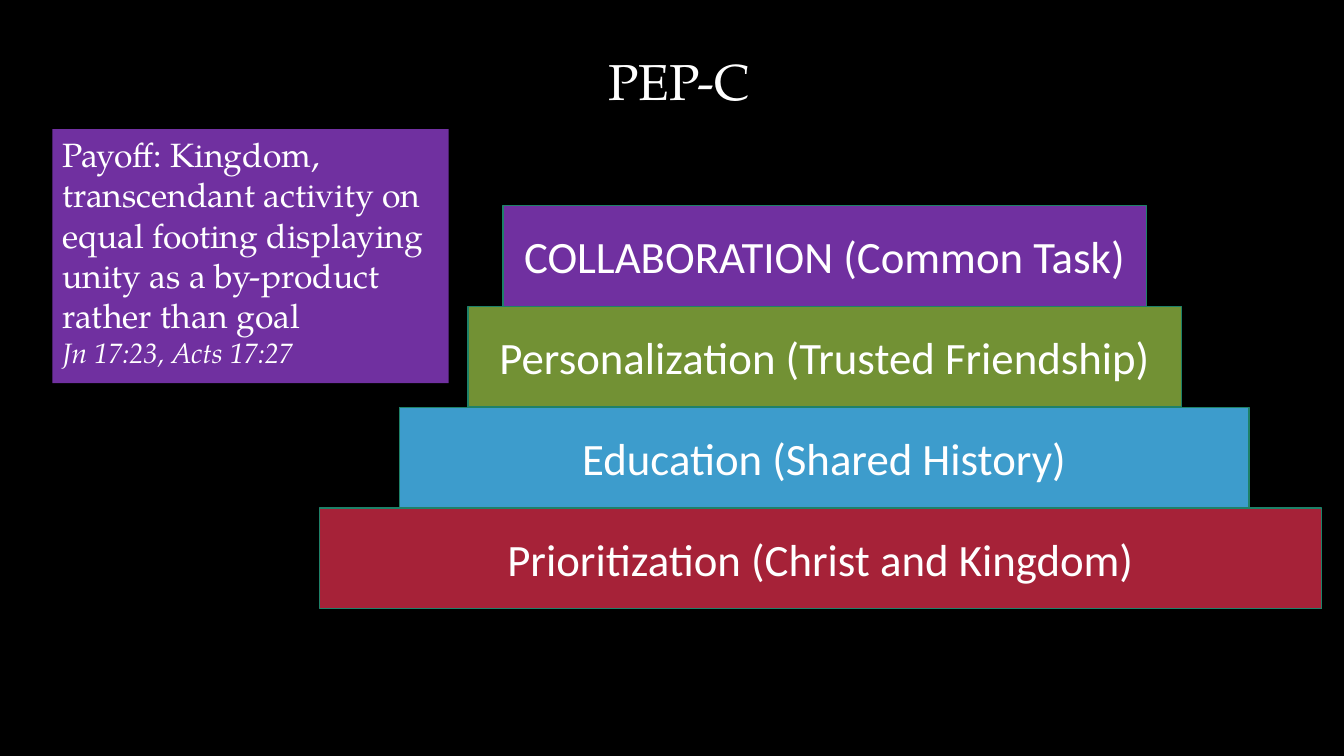
from pptx import Presentation
from pptx.dml.color import RGBColor
from pptx.enum.shapes import MSO_SHAPE as Shape
from pptx.enum.text import MSO_ANCHOR as Anchor, MSO_AUTO_SIZE as AutoSize, PP_ALIGN as Align
from pptx.util import Pt

PX = 9144  # EMU per px, 100 px to the inch
SLIDE_SIZE = (1333, 750)

SERIF, SANS = "TeX Gyre Pagella", "Calibri"
BLACK, WHITE, PURPLE, EDGE = "000000", "FFFFFF", "7030A0", "1E8168"

TITLE = "PEP-C"
TITLE_BOX = (68, 52, 1211, 90)

# Steps from the bottom up: text, fill, left, width
STEPS = [
    ("Prioritization (Christ and Kingdom)", "A62238", 317, 994),
    ("Education (Shared History)", "3D9CCC", 396, 843),
    ("Personalization (Trusted Friendship)", "729134", 464, 708),
    ("COLLABORATION (Common Task)", PURPLE, 499, 638),
]
STEP_HEIGHT, BOTTOM_STEP_TOP = 100, 504

PAYOFF_BOX = (52, 128, 393, 252)
# Text, size, italic
PAYOFF = [
    ("Payoff: Kingdom, transcendant activity on equal footing "
     "displaying unity as a by-product rather than goal", 24, False),
    ("Jn 17:23, Acts 17:27", 20, True),
]


def color(code):
    return RGBColor.from_string(code)


def emu(lengths):
    return [length * PX for length in lengths]


def add_span(para, text, font, size, italic=False):
    span = para.add_run()
    span.text = text
    span.font.name = font
    span.font.size = Pt(size)
    span.font.bold = False
    span.font.italic = italic
    span.font.color.rgb = color(WHITE)


def add_box(page, bounds, fill, edge=None):
    box = page.shapes.add_shape(Shape.RECTANGLE, *emu(bounds))
    box.shadow.inherit = False
    box.fill.solid()
    box.fill.fore_color.rgb = color(fill)
    if edge:
        box.line.color.rgb = color(edge)
        box.line.width = Pt(1)
    else:
        box.line.fill.background()
    box.text_frame.word_wrap = True
    return box


def add_title(page):
    title = page.shapes.title
    title.left, title.top, title.width, title.height = emu(TITLE_BOX)
    frame = title.text_frame
    frame.auto_size = AutoSize.NONE
    frame.vertical_anchor = Anchor.TOP
    para = frame.paragraphs[0]
    para.alignment = Align.CENTER
    para.line_spacing = 0.9
    para.space_before = Pt(10)
    add_span(para, TITLE, SERIF, 36)


def add_steps(page):
    for level, (text, fill, left, width) in enumerate(STEPS):
        top = BOTTOM_STEP_TOP - level * STEP_HEIGHT
        box = add_box(page, (left, top, width, STEP_HEIGHT), fill, EDGE)
        box.text_frame.vertical_anchor = Anchor.MIDDLE
        para = box.text_frame.paragraphs[0]
        para.alignment = Align.CENTER
        add_span(para, text, SANS, 32)


def add_payoff(page):
    frame = add_box(page, PAYOFF_BOX, PURPLE).text_frame
    frame.vertical_anchor = Anchor.TOP
    frame.auto_size = AutoSize.SHAPE_TO_FIT_TEXT
    for index, (text, size, italic) in enumerate(PAYOFF):
        para = frame.add_paragraph() if index else frame.paragraphs[0]
        para.alignment = Align.LEFT
        add_span(para, text, SERIF, size, italic)


def main():
    deck = Presentation()
    deck.slide_width, deck.slide_height = emu(SLIDE_SIZE)
    page = deck.slides.add_slide(deck.slide_layouts.get_by_name("Title Only"))
    page.background.fill.solid()
    page.background.fill.fore_color.rgb = color(BLACK)
    add_title(page)
    add_steps(page)
    add_payoff(page)
    deck.save("out.pptx")


if __name__ == "__main__":
    main()
